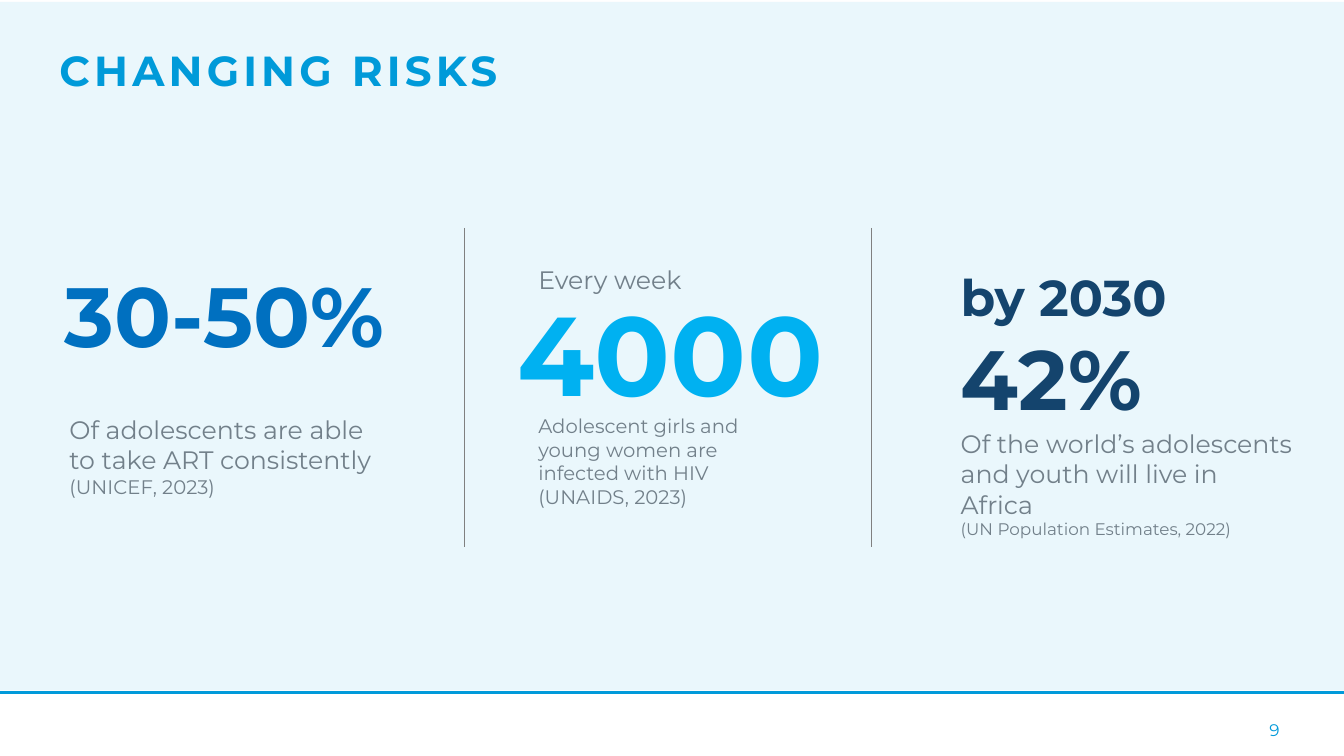
from pptx import Presentation
from pptx.dml.color import RGBColor
from pptx.enum.shapes import MSO_CONNECTOR, MSO_SHAPE
from pptx.enum.text import MSO_ANCHOR, PP_ALIGN
from pptx.oxml import parse_xml
from pptx.oxml.ns import nsdecls
from pptx.util import Inches, Pt

# Content
WIDTH, HEIGHT = 13.33, 7.5
FONT = "Montserrat"
GREY = "72808A"
TITLE = "CHANGING RISKS"
PAGE_NUMBER = "9"

# Each text: box (left, top, width, height), colour, bold, lines of (text, size)
FIGURES = [
    ((0.54, 2.56, 3.95, 1.11), "0070C0", PP_ALIGN.LEFT, [("30-50%", 60)]),
    ((5.03, 2.76, 3.24, 1.45), "00B1F1", PP_ALIGN.CENTER, [("4000", 80)]),
    ((9.43, 2.58, 3.31, 1.72), "14446D", PP_ALIGN.LEFT,
     [("by 2030", 36), ("42%", 60)]),
]
CAPTIONS = [
    ((0.59, 4.06, 3.29, 0.94),
     [("Of adolescents are able to take ART consistently", 18),
      ("(UNICEF, 2023)", 14)]),
    ((5.24, 2.57, 2.72, 0.4), [("Every week", 18)]),
    ((5.24, 4.06, 2.72, 1.03),
     [("Adolescent girls and young women are infected with HIV", 14),
      ("(UNAIDS, 2023)", 14)]),
    ((9.43, 4.2, 3.5, 1.21),
     [("Of the world’s adolescents and youth will live in Africa", 18),
      ("(UN Population Estimates, 2022)", 12)]),
]
DIVIDERS = [4.61, 8.64]
DIVIDER_TOP, DIVIDER_BOTTOM = 2.26, 5.43
FOOTER_LINE = 6.87

prs = Presentation()
prs.slide_width, prs.slide_height = Inches(WIDTH), Inches(HEIGHT)
slide = prs.slides.add_slide(prs.slide_layouts[6])


def colour(hex_string):
    return RGBColor.from_string(hex_string)


def add_rule(start, end, hex_string, weight):
    rule = slide.shapes.add_connector(
        MSO_CONNECTOR.STRAIGHT, *map(Inches, start + end))
    rule.line.color.rgb = colour(hex_string)
    rule.line.width = Pt(weight)
    rule._element.spPr.append(parse_xml(f"<a:effectLst {nsdecls('a')}/>"))


def add_text(box, lines, hex_string, bold=False, align=PP_ALIGN.LEFT,
             anchor=MSO_ANCHOR.TOP, spacing=0):
    frame = slide.shapes.add_textbox(*map(Inches, box)).text_frame
    frame.word_wrap = True
    frame.vertical_anchor = anchor
    for index, (words, size) in enumerate(lines):
        paragraph = frame.add_paragraph() if index else frame.paragraphs[0]
        paragraph.alignment = align
        run = paragraph.add_run()
        run.text = words
        run.font.name = FONT
        run.font.size = Pt(size)
        run.font.bold = bold
        run.font.color.rgb = colour(hex_string)
        if spacing:
            run.font._element.set("spc", str(spacing * 100))


# Footer line and pale panel
add_rule((0, FOOTER_LINE), (WIDTH, FOOTER_LINE), "009ADA", 2)
panel = slide.shapes.add_shape(
    MSO_SHAPE.RECTANGLE, *map(Inches, (-0.01, 0.02, WIDTH + 0.02, 6.83)))
panel.shadow.inherit = False
panel.fill.solid()
panel.fill.fore_color.rgb = colour("EAF7FC")
panel.line.fill.background()

# Captions and large figures
for box, lines in CAPTIONS:
    add_text(box, lines, GREY)
for box, hex_string, align, lines in FIGURES:
    add_text(box, lines, hex_string, True, align, MSO_ANCHOR.MIDDLE)

# Column dividers
for x in DIVIDERS:
    add_rule((x, DIVIDER_TOP), (x, DIVIDER_BOTTOM), "808080", 0.75)

# Page number and title
add_text((9.79, 7.04, 3, 0.4), [(PAGE_NUMBER, 12)], "009ADA",
         align=PP_ALIGN.RIGHT, anchor=MSO_ANCHOR.MIDDLE)
add_text((0.49, 0.39, 12.85, 0.61), [(TITLE, 30)], "009AD9", True, spacing=3)

prs.save("out.pptx")
